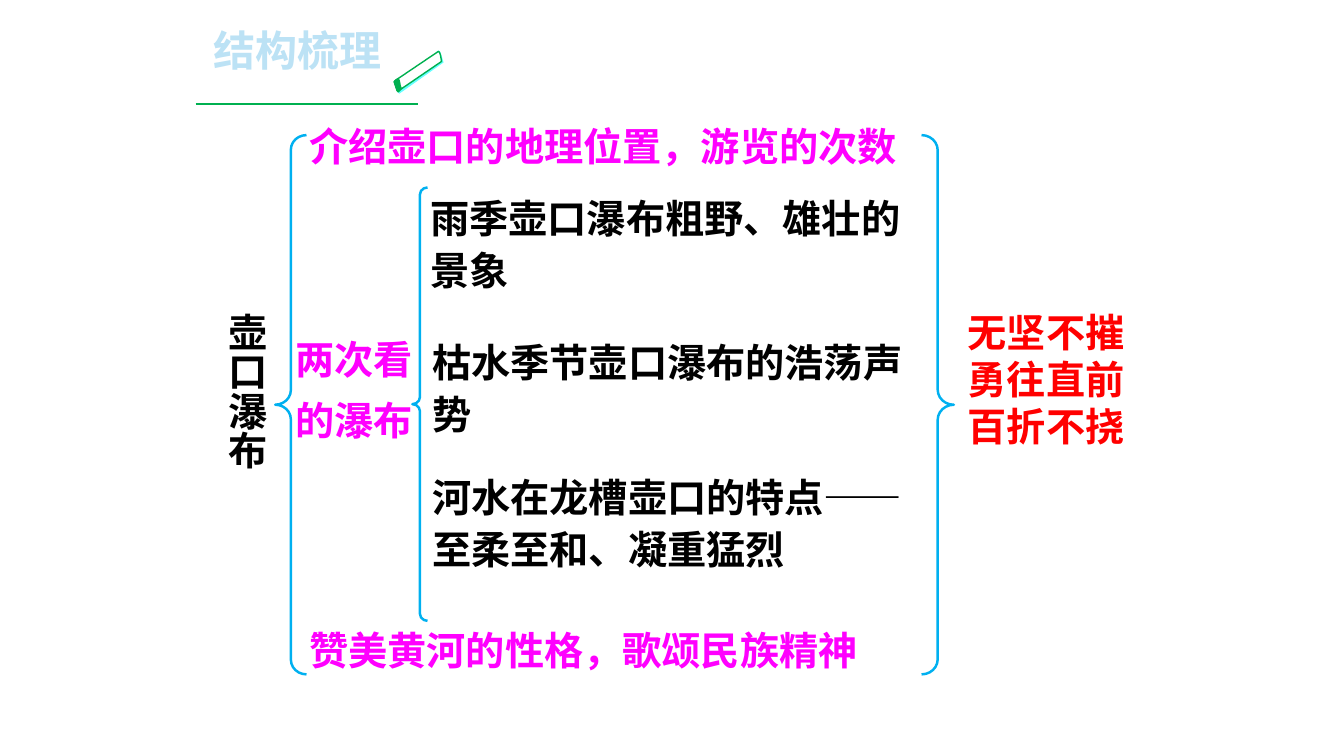
from pptx import Presentation
from pptx.dml.color import RGBColor
from pptx.enum.shapes import MSO_CONNECTOR, MSO_SHAPE
from pptx.enum.text import MSO_AUTO_SIZE as AUTO
from pptx.oxml import parse_xml
from pptx.oxml.ns import nsdecls
from pptx.util import Inches, Pt

FONT = "Noto Sans CJK SC"
PALE = RGBColor(0xBC, 0xE2, 0xF5)
GREEN = RGBColor(0x00, 0xB0, 0x50)
CYAN = RGBColor(0x66, 0xFF, 0xFF)
BLUE = RGBColor(0x00, 0xB0, 0xF0)
PINK = RGBColor(0xFF, 0x00, 0xFF)
RED = RGBColor(0xFF, 0x00, 0x00)
BLACK = RGBColor(0x00, 0x00, 0x00)

# Pen outlines in hundredths of an inch
SHADE = [(435, 50), (432, 52), (435, 51), (436, 52), (438, 61), (429, 67),
         (398, 89), (394, 91), (396, 93), (399, 91), (440, 62), (437, 52)]
BARREL = [(391, 81), (394, 90), (395, 91), (397, 89), (438, 61), (437, 55),
          (436, 52), (435, 51), (432, 53), (392, 80)]
TIP = [(398, 88), (397, 85), (396, 80), (395, 78), (392, 80), (391, 81),
       (394, 90), (395, 91), (397, 89)]


def add_text(slide, box, lines, color, size=28, gap=1.0, vert=None):
    shape = slide.shapes.add_textbox(*map(Inches, box))
    frame = shape.text_frame
    frame.word_wrap = True
    frame.auto_size = AUTO.SHAPE_TO_FIT_TEXT
    if vert:
        frame._txBody.bodyPr.set("vert", vert)
    for i, line in enumerate(lines):
        para = frame.paragraphs[0] if i == 0 else frame.add_paragraph()
        para.line_spacing = gap
        run = para.add_run()
        run.text = line
        font = run.font
        font.size, font.bold, font.name = Pt(size), True, FONT
        font.color.rgb = color
        font._element.append(
            parse_xml(f'<a:ea {nsdecls("a")} typeface="{FONT}"/>'))
    return shape


def add_edge(shape, color="58B6E5", width=1.75):
    """Outline the letters of the first run."""
    run = shape.text_frame.paragraphs[0].runs[0]
    run.font._element.insert(0, parse_xml(
        f'<a:ln {nsdecls("a")} w="{Pt(width)}"><a:solidFill>'
        f'<a:srgbClr val="{color}"/></a:solidFill></a:ln>'))


def paint(shape, fill=None, line=None, width=1):
    shape.shadow.inherit = False
    for part, color in ((shape.fill, fill), (shape.line.fill, line)):
        if color is None:
            part.background()
        else:
            part.solid()
            part.fore_color.rgb = color
    if line is not None:
        shape.line.width = Pt(width)


def add_brace(slide, box, turn=0):
    brace = slide.shapes.add_shape(MSO_SHAPE.LEFT_BRACE, *map(Inches, box))
    brace.adjustments[0] = 0.468
    brace.rotation = turn
    paint(brace, line=BLUE, width=1.75)


def add_rule(slide, left, right, top):
    rule = slide.shapes.add_connector(
        MSO_CONNECTOR.STRAIGHT, *map(Inches, (left, top, right, top)))
    rule.line.color.rgb = GREEN
    rule.line.width = Pt(1)
    rule._element.spPr.append(parse_xml(f'<a:effectLst {nsdecls("a")}/>'))


def add_pen(slide):
    for points, fill, line in ((SHADE, CYAN, None), (BARREL, None, GREEN),
                               (TIP, GREEN, GREEN)):
        path = slide.shapes.build_freeform(*points[0], scale=Inches(0.01))
        path.add_line_segments(points[1:], close=True)
        paint(path.convert_to_shape(), fill, line)


def main():
    deck = Presentation()
    deck.slide_width, deck.slide_height = Inches(13.33), Inches(7.5)
    slide = deck.slides.add_slide(deck.slide_layouts[6])

    add_edge(add_text(slide, (2.02, 0.19, 1.89, 0.61), ["结构梳理"], PALE, 30))
    add_rule(slide, 1.94, 4.15, 1.03)
    add_pen(slide)

    add_brace(slide, (2.73, 1.34, 0.31, 5.35))
    add_brace(slide, (4.09, 1.86, 0.15, 4.3))
    add_brace(slide, (9.14, 1.34, 0.32, 5.35), turn=180)

    add_text(slide, (2.06, 3.01, 0.81, 2.2), ["壶口瀑布"], BLACK,
             gap=1.3, vert="eaVert")
    for box, line in (
            ((2.97, 1.02, 6.38, 0.71), "介绍壶口的地理位置，游览的次数"),
            ((2.83, 3.14, 1.41, 1.32), "两次看的瀑布"),
            ((2.97, 6.02, 5.98, 0.71), "赞美黄河的性格，歌颂民族精神")):
        add_text(slide, box, [line], PINK, gap=1.3)
    for box, line in (
            ((4.17, 1.83, 4.97, 1.14), "雨季壶口瀑布粗野、雄壮的景象"),
            ((4.19, 3.26, 4.9, 1.14), "枯水季节壶口瀑布的浩荡声势"),
            ((4.19, 4.6, 4.9, 1.14), "河水在龙槽壶口的特点——至柔至和、凝重猛烈")):
        add_text(slide, box, [line], BLACK, gap=1.1)
    add_text(slide, (9.5, 3.01, 1.86, 1.51),
             ["无坚不摧", "勇往直前", "百折不挠"], RED)

    deck.save("out.pptx")


if __name__ == "__main__":
    main()
